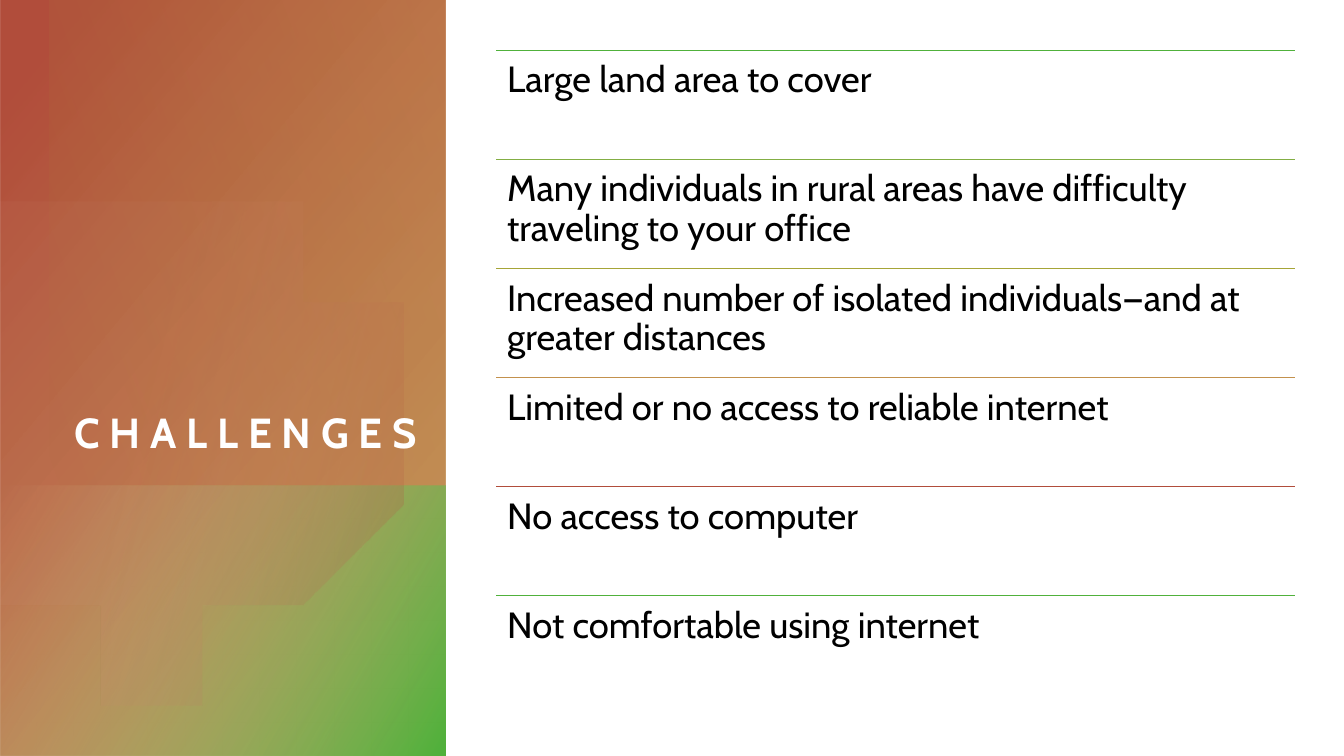
from lxml import etree
from pptx import Presentation
from pptx.dml.color import RGBColor
from pptx.enum import shapes as kinds, text as txt
from pptx.oxml import ns
from pptx.util import Inches, Pt

RED = RGBColor(0xB1, 0x4D, 0x3B)
PINK = RGBColor(0xD6, 0x90, 0x84)
TAN = RGBColor(0xC3, 0x91, 0x4D)
SAND = RGBColor(0xDB, 0xBD, 0x94)
OLIVE = RGBColor(0xA6, 0xA5, 0x37)
MOSS = RGBColor(0x83, 0xAE, 0x44)
GREEN = RGBColor(0x50, 0xB1, 0x3B)
WHITE = RGBColor(0xFF, 0xFF, 0xFF)
BLACK = RGBColor(0, 0, 0)
FONT = "Cabin"

ROWS = [
    ("Large land area to cover", GREEN),
    ("Many individuals in rural areas have difficulty traveling to your office", MOSS),
    ("Increased number of isolated individuals—and at greater distances", OLIVE),
    ("Limited or no access to reliable internet", TAN),
    ("No access to computer", RED),
    ("Not comfortable using internet", GREEN),
]
LEFT, TOP, WIDTH, STEP = 4.92, 0.5, 7.92, 1.082

# Start of the disc outline, then curves as (control, control, end)
START = (1.64, 1.96)
CURVES = [
    ((2.61, 1.98), (3.5, 2.63), (3.78, 3.62)),
    ((4.13, 4.83), (3.43, 6.1), (2.22, 6.44)),
    ((1.46, 6.66), (0.68, 6.47), (0.12, 6)),
    ((0.08, 5.96), (0.04, 5.93), (0, 5.89)),
    ((0, 4.8), (0, 3.7), (0, 2.61)),
    ((0.05, 2.56), (0.1, 2.52), (0.15, 2.47)),
    ((0.38, 2.29), (0.65, 2.14), (0.95, 2.05)),
    ((1.18, 1.99), (1.41, 1.96), START),
]


def blend(shape, angle, stops):
    """Fill with a linear gradient of (position %, colour, opacity %) stops."""
    shape.shadow.inherit = False
    shape.line.fill.background()
    shape.fill.gradient()
    grad = shape._element.spPr.find(ns.qn("a:gradFill"))
    for child in list(grad):
        grad.remove(child)
    grad.set("rotWithShape", "1")
    group = etree.SubElement(grad, ns.qn("a:gsLst"))
    for place, color, alpha in stops:
        stop = etree.SubElement(group, ns.qn("a:gs"), pos=str(place * 1000))
        tint = etree.SubElement(stop, ns.qn("a:srgbClr"), val=str(color))
        etree.SubElement(tint, ns.qn("a:alpha"), val=str(alpha * 1000))
    etree.SubElement(grad, ns.qn("a:lin"), ang=str(angle * 60000), scaled="0")


def add_panel(slide, box, turn, angle, stops):
    panel = slide.shapes.add_shape(
        kinds.MSO_SHAPE.RECTANGLE, *[Inches(n) for n in box])
    panel.rotation = turn
    panel._element.spPr.find(ns.qn("a:xfrm")).set("flipH", "1")
    blend(panel, angle, stops)


def trace(start, curves, count=16):
    """Points along a chain of cubic curves."""
    points = []
    for one, two, end in curves:
        for i in range(1, count + 1):
            t = i / count
            s = 1 - t
            points.append(tuple(
                s**3 * a + 3 * s * s * t * b + 3 * s * t * t * c + t**3 * d
                for a, b, c, d in zip(start, one, two, end)))
        start = end
    return points


def add_disc(slide):
    pen = slide.shapes.build_freeform(*START, scale=Inches(1))
    pen.add_line_segments(trace(START, CURVES), close=True)
    blend(pen.convert_to_shape(), 14, [(36, PINK, 6), (100, RED, 26)])


def style(frame, size, color, bold=False):
    for run in frame.paragraphs[0].runs:
        run.font.name = FONT
        run.font.size = Pt(size)
        run.font.bold = bold
        run.font.color.rgb = color


def inset(frame, gap):
    frame.margin_left = frame.margin_right = Inches(gap)
    frame.margin_top = frame.margin_bottom = Inches(gap)
    frame.word_wrap = True


def set_title(slide, words):
    title = slide.shapes.title
    title.left, title.top = Inches(-0.49), Inches(0.85)
    title.width, title.height = Inches(4.63), Inches(3.68)
    frame = title.text_frame
    frame.text = words
    inset(frame, 0)
    frame.auto_size = txt.MSO_AUTO_SIZE.NONE
    frame.vertical_anchor = txt.MSO_ANCHOR.BOTTOM
    frame.paragraphs[0].alignment = txt.PP_ALIGN.RIGHT
    style(frame, 30, WHITE, True)
    frame.paragraphs[0].runs[0].font._element.set("spc", "700")
    slide.shapes._spTree.append(title._element)  # bring above the panels


def add_row(slide, top, words, color):
    x, y, wide = Inches(LEFT), Inches(top), Inches(WIDTH)
    rule = slide.shapes.add_connector(
        kinds.MSO_CONNECTOR.STRAIGHT, x, y, x + wide, y)
    rule.line.color.rgb = color
    rule.line.width = Pt(1)
    etree.SubElement(rule._element.spPr, ns.qn("a:effectLst"))
    frame = slide.shapes.add_textbox(x, y, wide, Inches(STEP)).text_frame
    frame.text = words
    inset(frame, 0.11)
    frame.paragraphs[0].line_spacing = 0.9
    style(frame, 26, BLACK)


def main():
    deck = Presentation()
    deck.slide_width, deck.slide_height = Inches(13.33), Inches(7.5)
    slide = deck.slides.add_slide(deck.slide_layouts[5])
    add_panel(slide, (-1.54, 1.54, 7.5, 4.42), 270, 50,
              [(8, RED, 100), (100, TAN, 89)])
    add_panel(slide, (0.86, 3.95, 2.69, 4.42), 270, 60,
              [(0, SAND, 0), (99, GREEN, 100)])
    add_disc(slide)
    add_panel(slide, (0.05, 0.45, 4.81, 3.92), 90, 110,
              [(0, TAN, 29), (100, OLIVE, 0)])
    set_title(slide, "CHALLENGES")
    for i, (words, color) in enumerate(ROWS):
        add_row(slide, TOP + i * STEP, words, color)
    deck.save("out.pptx")


if __name__ == "__main__":
    main()
